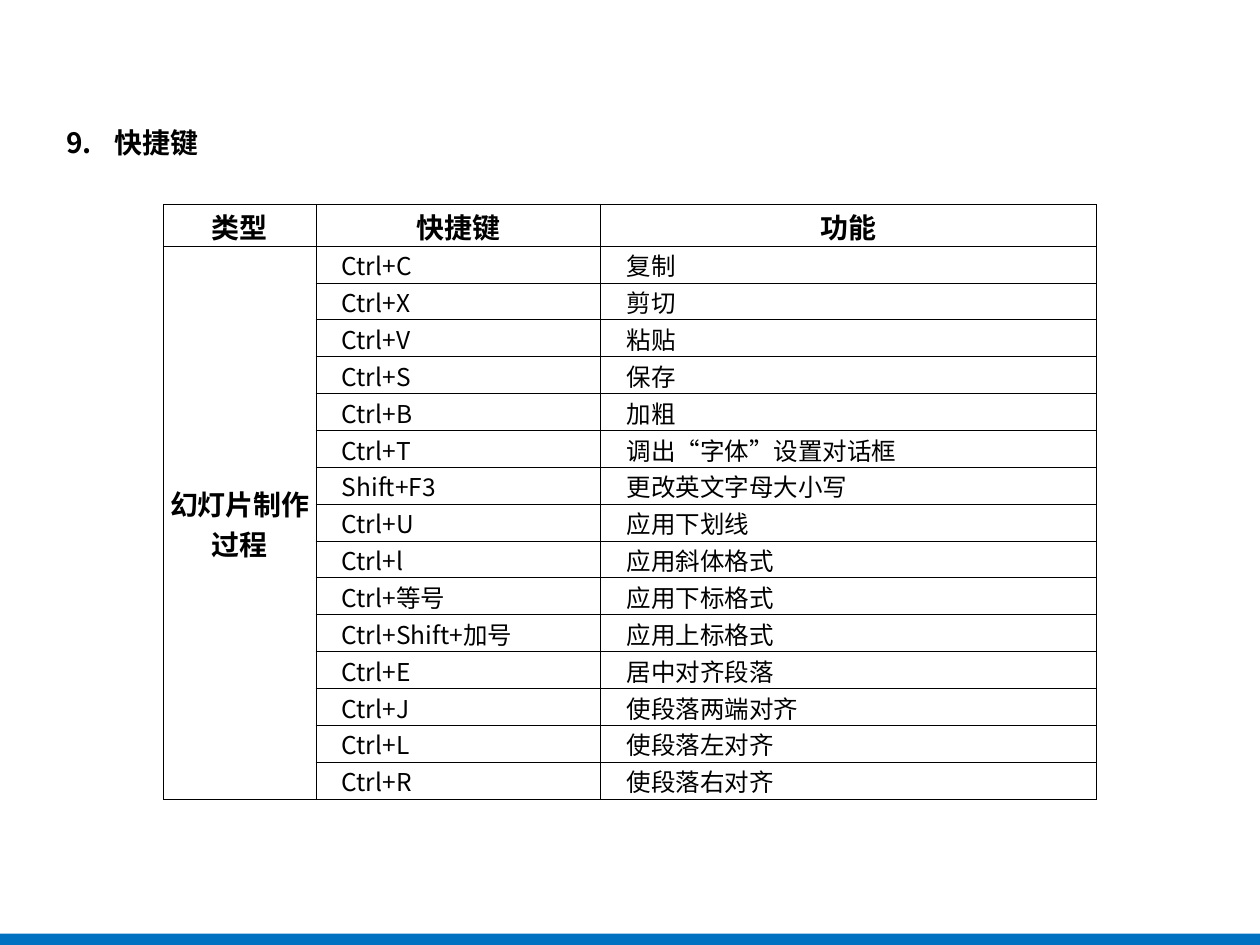
from lxml.etree import SubElement
from pptx import Presentation
from pptx.dml.color import RGBColor
from pptx.enum.shapes import MSO_SHAPE
from pptx.enum.text import MSO_ANCHOR, MSO_AUTO_SIZE, PP_ALIGN
from pptx.oxml.ns import qn
from pptx.util import Cm, Pt

FONT = "Noto Sans CJK SC"
BLACK = "000000"
BLUE = "0070C0"
HEADERS = ["类型", "快捷键", "功能"]
CATEGORY = "幻灯片制作过程"
SHORTCUTS = [
    ("Ctrl+C", "复制"),
    ("Ctrl+X", "剪切"),
    ("Ctrl+V", "粘贴"),
    ("Ctrl+S", "保存"),
    ("Ctrl+B", "加粗"),
    ("Ctrl+T", "调出“字体”设置对话框"),
    ("Shift+F3", "更改英文字母大小写"),
    ("Ctrl+U", "应用下划线"),
    ("Ctrl+l", "应用斜体格式"),
    ("Ctrl+等号", "应用下标格式"),
    ("Ctrl+Shift+加号", "应用上标格式"),
    ("Ctrl+E", "居中对齐段落"),
    ("Ctrl+J", "使段落两端对齐"),
    ("Ctrl+L", "使段落左对齐"),
    ("Ctrl+R", "使段落右对齐"),
]
JUSTIFIED = {"剪切", "保存", "加粗"}
COLUMN_WIDTHS = [3.07, 5.74, 10]
HEADER_HEIGHT = 0.84


def color(value):
    """Turn a hex string into a colour."""
    return RGBColor.from_string(value)


def add_run(paragraph, text, size, bold):
    """Add one run in the slide's font."""
    run = paragraph.add_run()
    run.text = text
    run.font.size = Pt(size)
    run.font.bold = bold
    run.font.name = FONT
    run.font.color.rgb = color(BLACK)
    SubElement(run.font._element, qn("a:ea"), typeface=FONT)


def set_indent(paragraph, left, first=0):
    """Set the left margin and first line indent, and return the properties."""
    properties = paragraph._p.get_or_add_pPr()
    properties.set("marL", str(Cm(left)))
    properties.set("indent", str(Cm(first)))
    return properties


def add_heading(slide, left, top, width, height):
    """Place the numbered heading."""
    shape = slide.shapes.add_textbox(Cm(left), Cm(top), Cm(width), Cm(height))
    frame = shape.text_frame
    frame.word_wrap = True
    frame.auto_size = MSO_AUTO_SIZE.SHAPE_TO_FIT_TEXT
    paragraph = frame.paragraphs[0]
    paragraph.line_spacing = 1.5
    properties = set_indent(paragraph, 0.97, -0.97)
    SubElement(properties, qn("a:buFont"), typeface=FONT)
    SubElement(properties, qn("a:buAutoNum"), type="arabicPeriod", startAt="9")
    add_run(paragraph, "快捷键", 16, True)


def style_cell(cell):
    """Give a cell thin black borders, no fill and narrow margins."""
    properties = cell._tc.get_or_add_tcPr()
    for side in ("lnL", "lnR", "lnT", "lnB"):
        line = SubElement(properties, qn(f"a:{side}"), w=str(Pt(0.5)))
        fill = SubElement(line, qn("a:solidFill"))
        SubElement(fill, qn("a:srgbClr"), val=BLACK)
    cell.fill.background()
    cell.margin_left = cell.margin_right = cell.margin_top = Cm(0.02)
    cell.margin_bottom = 0
    cell.vertical_anchor = MSO_ANCHOR.BOTTOM


def write_title(cell, text):
    """Write a bold centred title in a cell."""
    paragraph = cell.text_frame.paragraphs[0]
    paragraph.alignment = PP_ALIGN.CENTER
    add_run(paragraph, text, 16, True)


def write_entry(cell, text):
    """Write an indented entry in a cell."""
    paragraph = cell.text_frame.paragraphs[0]
    set_indent(paragraph, 0.5)
    if text in JUSTIFIED:
        paragraph.alignment = PP_ALIGN.JUSTIFY
        cell.vertical_anchor = MSO_ANCHOR.MIDDLE
    add_run(paragraph, text, 14, False)


def add_shortcut_table(slide, left, top, width, height):
    """Place the table of shortcuts, with one category cell down its side."""
    count = len(SHORTCUTS)
    table = slide.shapes.add_table(
        count + 1, len(HEADERS), Cm(left), Cm(top), Cm(width), Cm(height)
    ).table
    table.first_row = table.horz_banding = False
    for column, column_width in zip(table.columns, COLUMN_WIDTHS):
        column.width = Cm(column_width)
    for row in table.rows:
        row.height = Cm((height - HEADER_HEIGHT) / count)
    table.rows[0].height = Cm(HEADER_HEIGHT)
    for cell in table.iter_cells():
        style_cell(cell)
    for index, header in enumerate(HEADERS):
        write_title(table.cell(0, index), header)
    category = table.cell(1, 0)
    category.merge(table.cell(count, 0))
    category.vertical_anchor = MSO_ANCHOR.MIDDLE
    write_title(category, CATEGORY)
    for row_index, entries in enumerate(SHORTCUTS, 1):
        for column_index, entry in enumerate(entries, 1):
            write_entry(table.cell(row_index, column_index), entry)


def add_footer_bar(slide, left, top, width, height):
    """Place the blue bar along the bottom edge."""
    shape = slide.shapes.add_shape(
        MSO_SHAPE.RECTANGLE, Cm(left), Cm(top), Cm(width), Cm(height)
    )
    shape.shadow.inherit = False
    shape.fill.solid()
    shape.fill.fore_color.rgb = color(BLUE)
    shape.line.fill.background()


def main():
    """Build and save the slide."""
    presentation = Presentation()
    presentation.slide_width = Cm(25.4)
    presentation.slide_height = Cm(19.05)
    slide = presentation.slides.add_slide(presentation.slide_layouts[6])
    add_heading(slide, 1.09, 2.06, 23.01, 1.17)
    add_shortcut_table(slide, 3.3, 4.12, sum(COLUMN_WIDTHS), 11.99)
    add_footer_bar(slide, -0.03, 18.82, 25.48, 0.3)
    presentation.save("out.pptx")


if __name__ == "__main__":
    main()
